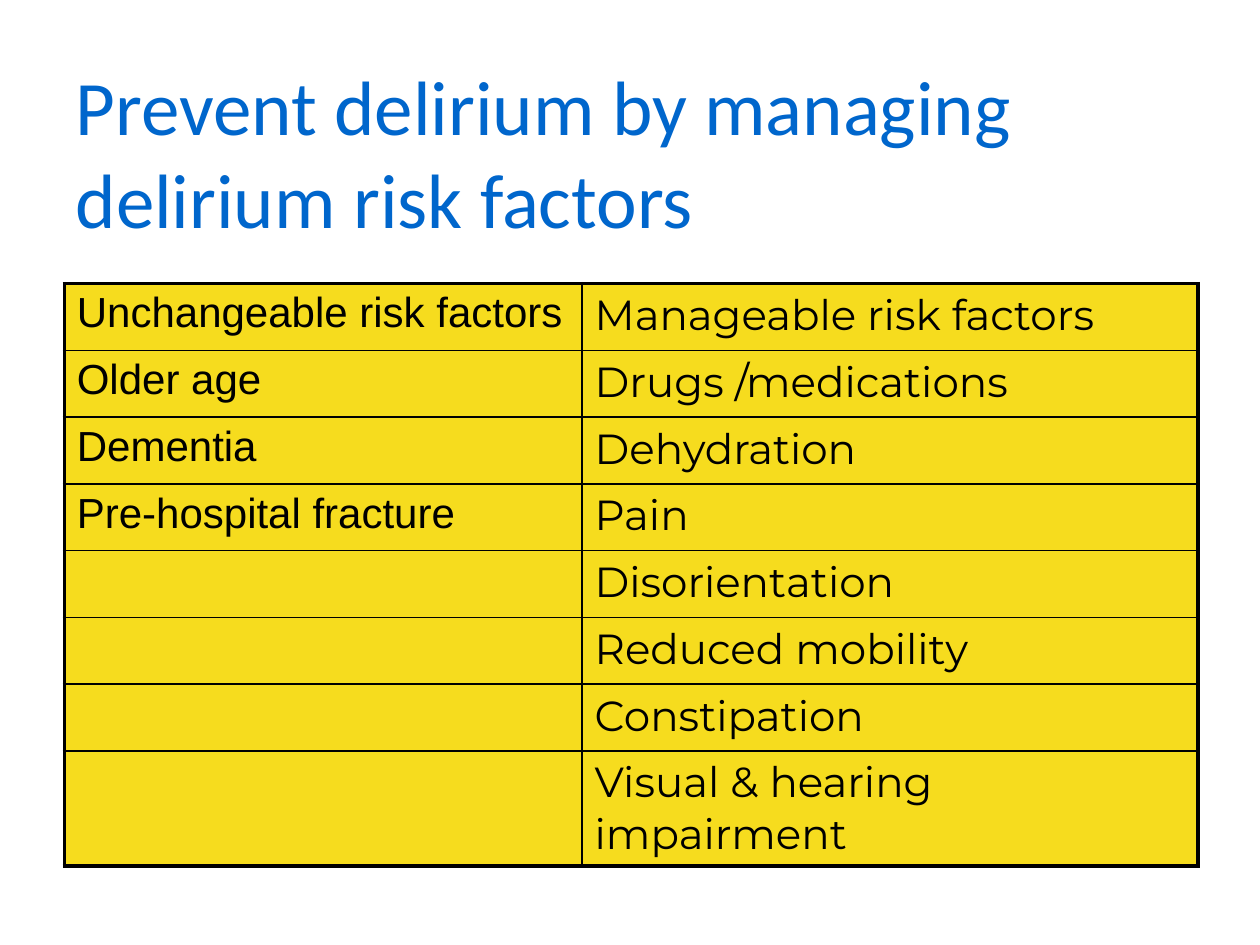
from itertools import zip_longest
from pptx import Presentation
from pptx.dml.color import RGBColor as RGB
from pptx.enum.text import MSO_ANCHOR as ANCHOR, PP_ALIGN as ALIGN
from pptx.oxml import parse_xml
from pptx.oxml.ns import nsdecls
from pptx.util import Inches, Pt

COLORS = {"title": "0066CC", "text": "000000", "fill": "F6DC1E", "line": "000000"}
TITLE = "Prevent delirium by managing delirium risk factors"
UNCHANGEABLE = ["Unchangeable risk factors", "Older age", "Dementia", "Pre-hospital fracture"]
MANAGEABLE = [
    "Manageable risk factors", "Drugs /medications", "Dehydration", "Pain",
    "Disorientation", "Reduced mobility", "Constipation", "Visual & hearing impairment",
]
FONTS = ["Arial", "Montserrat"]
COL_WIDTHS = [4.11, 4.89]
ROW_HEIGHTS = [0.53] * 7 + [0.9]
OUTER, INNER = 2.25, 1


def style(font, **values):
    color = values.pop("color")
    for name, value in values.items():
        setattr(font, name, value)
    font.color.rgb = RGB.from_string(COLORS[color])


def add_borders(cell, widths):
    tcPr = cell._tc.get_or_add_tcPr()
    for side, width in widths.items():
        tcPr.append(parse_xml(
            f'<a:ln{side} {nsdecls("a")} w="{Pt(width)}"><a:solidFill>'
            f'<a:srgbClr val="{COLORS["line"]}"/></a:solidFill></a:ln{side}>'))


def add_title(s):
    title = s.shapes.title
    box = {"left": 0.5, "top": 0.3, "width": 9.07, "height": 1.8}
    for name, value in box.items():
        setattr(title, name, Inches(value))
    tf = title.text_frame
    tf.word_wrap, tf.vertical_anchor = True, ANCHOR.MIDDLE
    p = tf.paragraphs[0]
    p.alignment = ALIGN.LEFT
    r = p.add_run()
    r.text = TITLE
    style(r.font, name="Calibri", size=Pt(44), color="title")


def add_risk_table(s):
    rows = list(zip_longest(UNCHANGEABLE, MANAGEABLE, fillvalue=""))
    last_row, last_col = len(rows) - 1, len(COL_WIDTHS) - 1
    frame = s.shapes.add_table(
        len(rows), len(COL_WIDTHS), Inches(0.51), Inches(2.25),
        Inches(sum(COL_WIDTHS)), Inches(sum(ROW_HEIGHTS)))
    table = frame.table
    table.first_row = table.horz_banding = False
    for column, width in zip(table.columns, COL_WIDTHS):
        column.width = Inches(width)
    for row, height in zip(table.rows, ROW_HEIGHTS):
        row.height = Inches(height)
    for i, texts in enumerate(rows):
        for j, text in enumerate(texts):
            cell = table.cell(i, j)
            edges = {"L": j == 0, "R": j == last_col, "T": i == 0, "B": i == last_row}
            add_borders(cell, {side: OUTER if edge else INNER for side, edge in edges.items()})
            cell.fill.solid()
            cell.fill.fore_color.rgb = RGB.from_string(COLORS["fill"])
            if text:
                r = cell.text_frame.paragraphs[0].add_run()
                r.text = text
                style(r.font, name=FONTS[j], size=Pt(24), color="text")


def main():
    prs = Presentation()
    prs.slide_width, prs.slide_height = Inches(10), Inches(7.5)
    s = prs.slides.add_slide(prs.slide_layouts[5])
    add_title(s)
    add_risk_table(s)
    prs.save("out.pptx")


if __name__ == "__main__":
    main()
